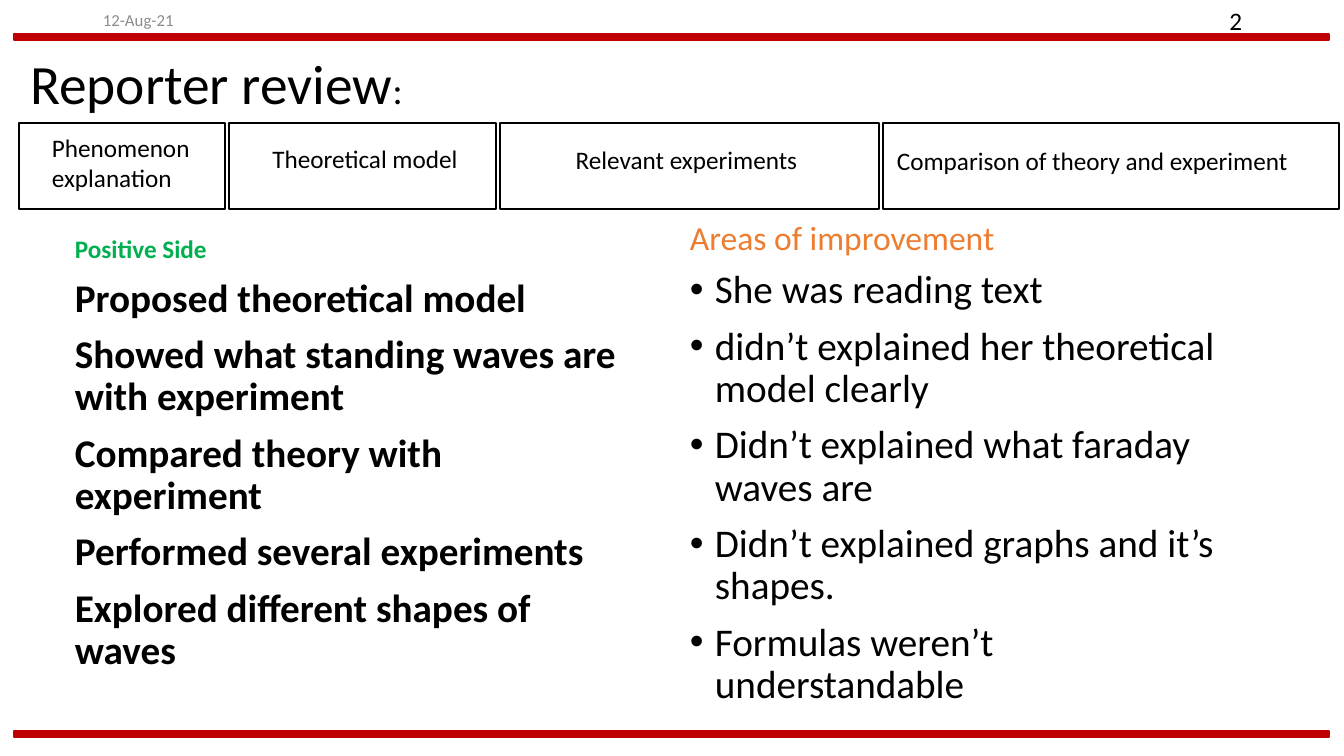
from lxml import etree
from pptx import Presentation
from pptx.dml.color import RGBColor
from pptx.enum.shapes import MSO_SHAPE
from pptx.enum.text import MSO_ANCHOR, PP_ALIGN
from pptx.oxml.ns import qn
from pptx.util import Emu, Pt

RECTANGLE = MSO_SHAPE.RECTANGLE
TOP, MIDDLE, BOTTOM = MSO_ANCHOR.TOP, MSO_ANCHOR.MIDDLE, MSO_ANCHOR.BOTTOM
LEFT, CENTER, RIGHT = PP_ALIGN.LEFT, PP_ALIGN.CENTER, PP_ALIGN.RIGHT

BLACK = RGBColor(0x00, 0x00, 0x00)
RED = RGBColor(0xC0, 0x00, 0x00)
GREEN = RGBColor(0x00, 0xB0, 0x50)
ORANGE = RGBColor(0xED, 0x7D, 0x31)
GRAY = RGBColor(0x8C, 0x8C, 0x8C)
FONT = "Calibri"

EMU_PER_PX = 914400 / 100.8
PAGE_SIZE = (1344, 756)

TITLE = [("Reporter review", 39.6), (":", 27)]
DATE, PAGE_NUMBER = "12-Aug-21", "2"
# Frame width, then label text, alignment and place (left, top, width, height)
STAGES = [
    (206, "Phenomenon explanation", LEFT, (42, 127, 208, 102)),
    (267, "Theoretical model", CENTER, (228, 138, 274, 40)),
    (379, "Relevant experiments", CENTER, (495, 139, 383, 40)),
    (456, "Comparison of theory and experiment", LEFT, (887, 140, 458, 40)),
]
POSITIVE_HEADING = "Positive Side"
POSITIVES = [
    "Proposed theoretical model",
    "Showed what standing waves are with experiment",
    "Compared theory with experiment",
    "Performed several experiments",
    "Explored different shapes of waves",
]
IMPROVEMENT_HEADING = "Areas of improvement"
IMPROVEMENTS = [
    "She was reading text",
    "didn’t explained her theoretical model clearly",
    "Didn’t explained what faraday waves are",
    "Didn’t explained graphs and it’s shapes.",
    "Formulas weren’t understandable",
]

BAR_LEFT, BAR_WIDTH, BAR_HEIGHT = 14, 1315, 6
BAR_TOPS = (34, 731)
STAGE_LEFT, STAGE_TOP, STAGE_HEIGHT, STAGE_GAP = 19, 123, 86, 4
BULLET_INDENT = 25


def px(length):
    return Emu(round(length * EMU_PER_PX))


def add_rectangle(page, place, line_color, line_width, fill=None):
    shape = page.shapes.add_shape(RECTANGLE, *map(px, place))
    shape.shadow.inherit = False
    if fill is None:
        shape.fill.background()
    else:
        shape.fill.solid()
        shape.fill.fore_color.rgb = fill
    shape.line.color.rgb = line_color
    shape.line.width = Pt(line_width)


def format_font(font, size, color, bold=False):
    font.name, font.size, font.bold = FONT, Pt(size), bold
    font.color.rgb = color


def add_text(page, place, lines, size, color=BLACK, bold=False,
             align=LEFT, anchor=TOP):
    box = page.shapes.add_textbox(*map(px, place))
    frame = box.text_frame
    frame.word_wrap = True
    frame.vertical_anchor = anchor
    frame.text = "\n".join(lines)
    for para in frame.paragraphs:
        para.alignment = align
        for span in para.runs:
            format_font(span.font, size, color, bold)
    return frame


def set_body_spacing(frame):
    for number, para in enumerate(frame.paragraphs):
        para.line_spacing = 0.9
        para.space_before = Pt(10 if number else 0)


def add_bullets(frame):
    for para in frame.paragraphs:
        properties = para._p.get_or_add_pPr()
        properties.set("marL", str(px(BULLET_INDENT)))
        properties.set("indent", str(-px(BULLET_INDENT)))
        etree.SubElement(properties, qn("a:buFont"), typeface="Arial")
        etree.SubElement(properties, qn("a:buChar"), char="•")


def fill_title(title):
    title.left, title.top, title.width, title.height = map(px, (20, 51, 508, 72))
    title.text_frame.vertical_anchor = MIDDLE
    para = title.text_frame.paragraphs[0]
    para.alignment = LEFT
    para.line_spacing = 0.9
    for text, size in TITLE:
        span = para.add_run()
        span.text = text
        format_font(span.font, size, BLACK)


def main():
    deck = Presentation()
    deck.slide_width, deck.slide_height = map(px, PAGE_SIZE)
    page = deck.slides.add_slide(deck.slide_layouts[5])

    for top in BAR_TOPS:
        add_rectangle(page, (BAR_LEFT, top, BAR_WIDTH, BAR_HEIGHT), RED, 1, RED)
    fill_title(page.shapes.title)
    add_text(page, (93, 0, 302, 40), [DATE], 12, GRAY, anchor=MIDDLE)
    add_text(page, (950, 0, 302, 40), [PAGE_NUMBER], 18, align=RIGHT, anchor=MIDDLE)

    left = STAGE_LEFT
    for width, label, align, label_place in STAGES:
        add_rectangle(page, (left, STAGE_TOP, width, STAGE_HEIGHT), BLACK, 1.5)
        add_text(page, label_place, [label], 18, align=align)
        left += width + STAGE_GAP

    positives = add_text(page, (65, 230, 569, 448), [POSITIVE_HEADING] + POSITIVES,
                         28, bold=True, anchor=BOTTOM)
    format_font(positives.paragraphs[0].runs[0].font, 18, GREEN, bold=True)
    heading = add_text(page, (680, 207, 572, 56), [IMPROVEMENT_HEADING], 24,
                       ORANGE, anchor=BOTTOM)
    improvements = add_text(page, (680, 265, 572, 491), IMPROVEMENTS, 28)
    add_bullets(improvements)
    for frame in (positives, heading, improvements):
        set_body_spacing(frame)

    deck.save("out.pptx")


if __name__ == "__main__":
    main()
